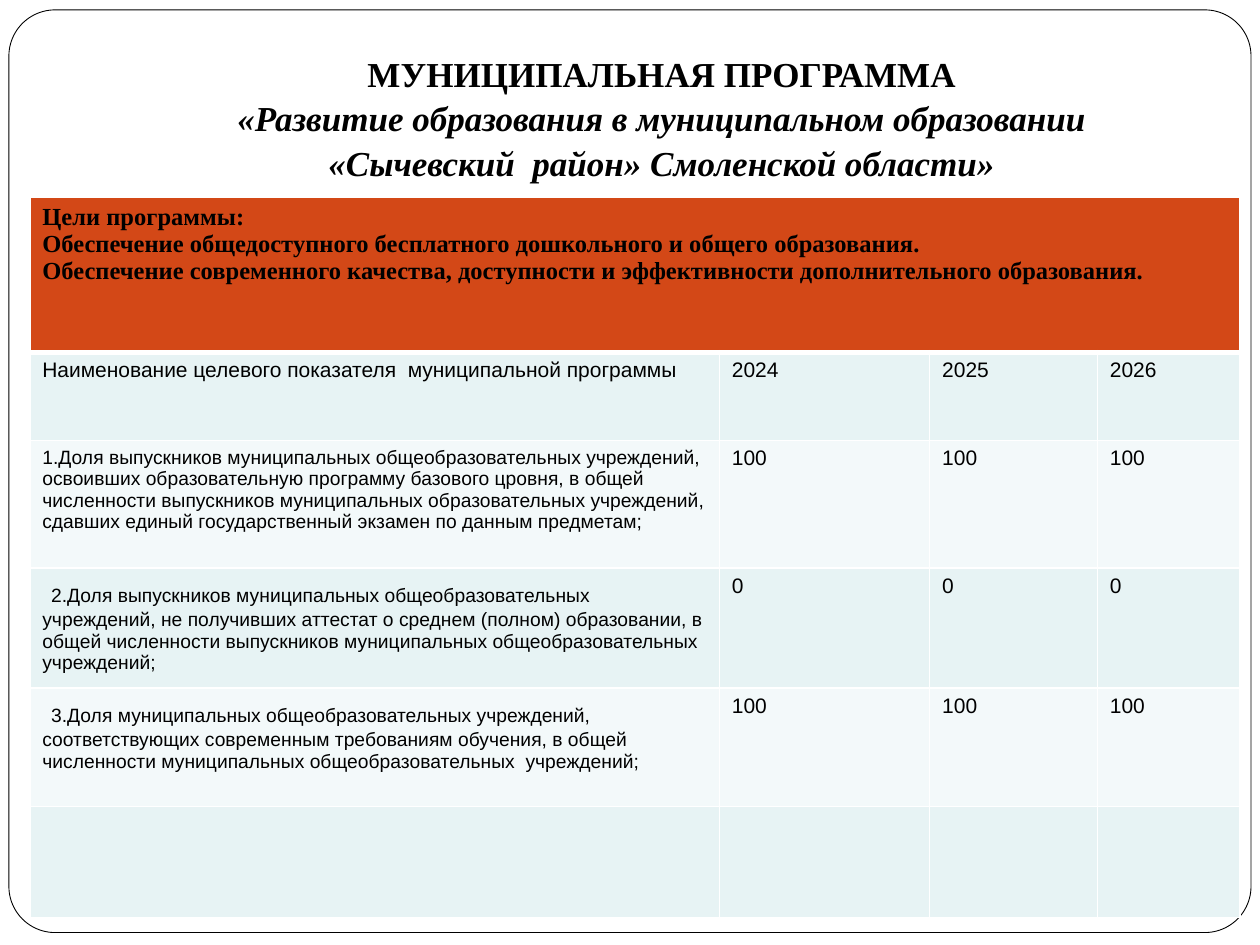
import dataclasses

import pptx
import pptx.dml.color
import pptx.enum.shapes
import pptx.enum.text
import pptx.oxml
import pptx.oxml.ns
import pptx.util

Cm = pptx.util.Cm
Pt = pptx.util.Pt


@dataclasses.dataclass(frozen=True)
class Theme:
    ink: str = "000000"
    paper: str = "FFFFFF"
    goals: str = "D34817"
    bands: tuple = ("E7F3F4", "F3F9FA")
    serif: str = "Times New Roman"
    sans: str = "Arial"
    title_size: int = 20
    goals_size: int = 14
    value_size: int = 12
    indicator_size: int = 11
    indent_size: int = 18


THEME = Theme()

GOALS = (
    "Цели программы:",
    "Обеспечение общедоступного бесплатного дошкольного и общего образования.",
    "Обеспечение современного качества, доступности и эффективности дополнительного образования.",
)
HEADINGS = ("Наименование целевого показателя  муниципальной программы", "2024", "2025", "2026")
INDICATORS = (
    ("", "1.Доля выпускников муниципальных общеобразовательных учреждений, освоивших "
         "образовательную программу базового цровня, в общей численности выпускников "
         "муниципальных образовательных учреждений, сдавших единый государственный экзамен "
         "по данным предметам;", "100"),
    (" ", "2.Доля выпускников муниципальных общеобразовательных учреждений, не получивших "
          "аттестат о среднем (полном) образовании, в общей численности выпускников "
          "муниципальных общеобразовательных  учреждений;", "0"),
    (" ", "3.Доля муниципальных общеобразовательных учреждений, соответствующих современным "
          "требованиям обучения, в общей численности муниципальных общеобразовательных  "
          "учреждений;", "100"),
)
COLUMN_WIDTHS = (13.9, 4.24, 3.38, 2.88)
ROW_HEIGHTS = (3.12, 1.78, 2.57, 2.39, 2.39, 2.24)


def rgb(value):
    return pptx.dml.color.RGBColor.from_string(value)


def write(para, text, size=THEME.value_size, font=THEME.sans, bold=False, italic=False):
    for index, line in enumerate(text.split("\n")):
        if index:
            para.add_line_break()
        if not line:
            continue
        span = para.add_run()
        span.text = line
        span.font.size = Pt(size)
        span.font.name = font
        span.font.bold = bold
        span.font.italic = italic
        span.font.color.rgb = rgb(THEME.ink)


def paint_cell(cell, fill, top=1, bottom=1):
    cell.fill.solid()
    cell.fill.fore_color.rgb = rgb(fill)
    properties = cell._tc.get_or_add_tcPr()
    borders = (("lnL", 1), ("lnR", 1), ("lnT", top), ("lnB", bottom))
    for index, (tag, width) in enumerate(borders):
        border = pptx.oxml.parse_xml(
            f'<a:{tag} {pptx.oxml.ns.nsdecls("a")} w="{Pt(width)}"><a:solidFill>'
            f'<a:srgbClr val="{THEME.paper}"/></a:solidFill></a:{tag}>')
        properties.insert(index, border)


def add_frame(page, left, top, width, height):
    frame = page.shapes.add_shape(
        pptx.enum.shapes.MSO_SHAPE.ROUNDED_RECTANGLE, Cm(left), Cm(top), Cm(width), Cm(height))
    frame.adjustments[0] = 0.05
    frame.shadow.inherit = False
    frame.fill.solid()
    frame.fill.fore_color.rgb = rgb(THEME.paper)
    frame.line.color.rgb = rgb(THEME.ink)
    frame.line.width = Pt(0.5)


def add_title(page, left, top, width, height):
    box = page.shapes.add_textbox(Cm(left), Cm(top), Cm(width), Cm(height))
    text_frame = box.text_frame
    text_frame.word_wrap = True
    text_frame.vertical_anchor = pptx.enum.text.MSO_ANCHOR.BOTTOM
    text_frame.margin_bottom = Cm(0.25)
    para = text_frame.paragraphs[0]
    para.alignment = pptx.enum.text.PP_ALIGN.CENTER
    para.line_spacing = 1.05
    style = {"size": THEME.title_size, "font": THEME.serif, "bold": True}
    write(para, "МУНИЦИПАЛЬНАЯ ПРОГРАММА\n", **style)
    write(para, "«Развитие образования в муниципальном образовании\n"
                "«Сычевский  район» Смоленской области»", italic=True, **style)


def add_goals(cell):
    for index, goal in enumerate(GOALS):
        para = cell.text_frame.add_paragraph() if index else cell.text_frame.paragraphs[0]
        write(para, goal, size=THEME.goals_size, font=THEME.serif, bold=True)


def add_indicator_table(page, left, top):
    table = page.shapes.add_table(
        len(ROW_HEIGHTS), len(COLUMN_WIDTHS), Cm(left), Cm(top),
        Cm(sum(COLUMN_WIDTHS)), Cm(sum(ROW_HEIGHTS))).table
    table.first_row = False
    table.horz_banding = False
    for column, width in zip(table.columns, COLUMN_WIDTHS):
        column.width = Cm(width)
    for index, (row, height) in enumerate(zip(table.rows, ROW_HEIGHTS)):
        row.height = Cm(height)
        fill = THEME.bands[(index - 1) % 2] if index else THEME.goals
        for cell in row.cells:
            paint_cell(cell, fill, top=3 if index == 1 else 1, bottom=1 if index else 3)

    table.cell(0, 0).merge(table.cell(0, len(COLUMN_WIDTHS) - 1))
    add_goals(table.cell(0, 0))
    for column, heading in enumerate(HEADINGS):
        write(table.cell(1, column).text_frame.paragraphs[0], heading)
    for row, (indent, name, value) in enumerate(INDICATORS, start=2):
        para = table.cell(row, 0).text_frame.paragraphs[0]
        write(para, indent, size=THEME.indent_size)
        write(para, name, size=THEME.indicator_size)
        for column in range(1, len(COLUMN_WIDTHS)):
            write(table.cell(row, column).text_frame.paragraphs[0], value)


def main():
    deck = pptx.Presentation()
    deck.slide_width = Cm(25.4)
    deck.slide_height = Cm(19.05)
    page = deck.slides.add_slide(deck.slide_layouts[6])
    add_frame(page, 0.18, 0.2, 25.04, 18.6)
    add_title(page, 2.54, 0.76, 21.6, 3.18)
    add_indicator_table(page, 0.6, 3.98)
    deck.save("out.pptx")


if __name__ == "__main__":
    main()
